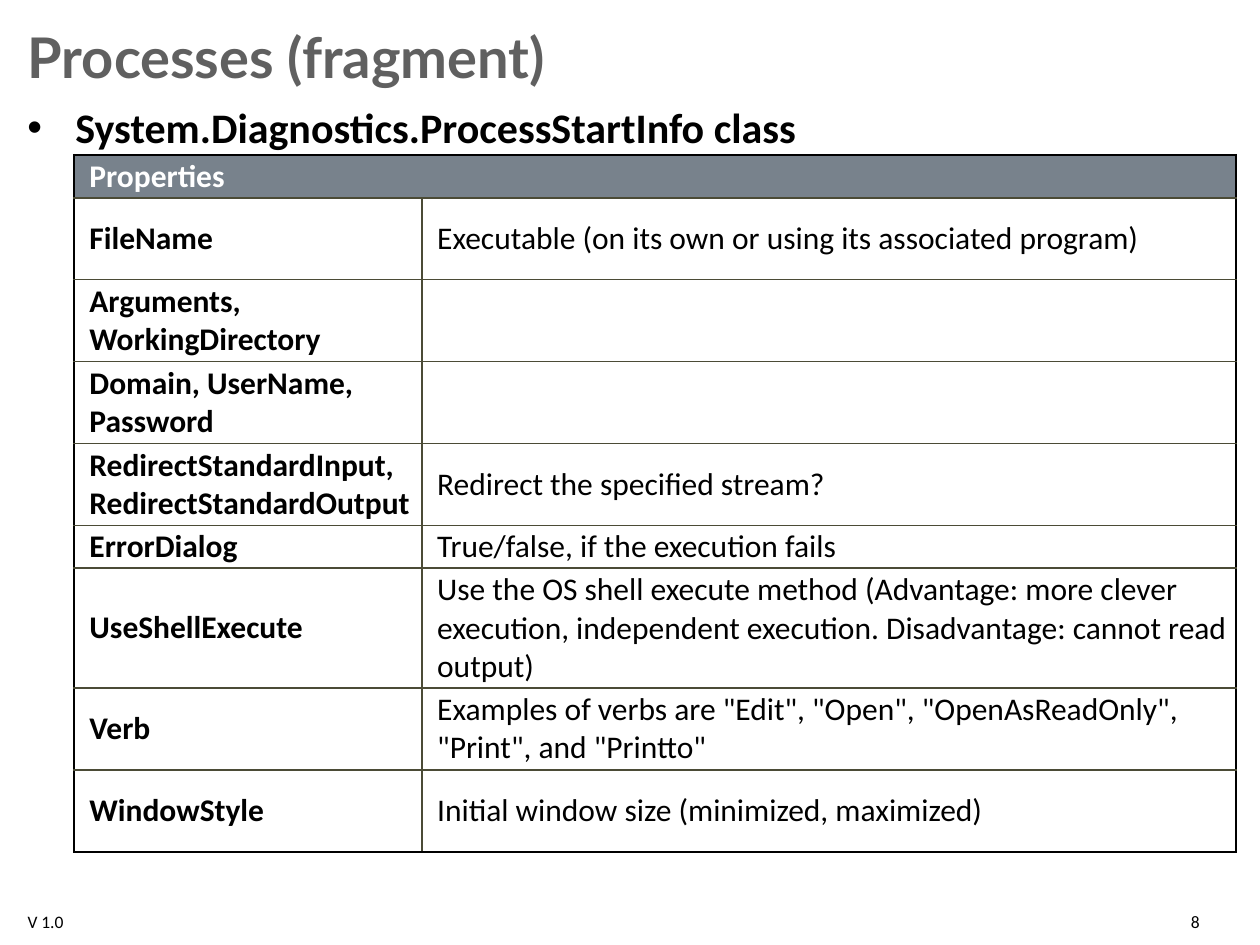
from lxml.etree import SubElement
from pptx import Presentation
from pptx.dml.color import RGBColor as Rgb
from pptx.enum.text import MSO_ANCHOR as Anchor, PP_ALIGN as Align
from pptx.oxml.ns import qn
from pptx.util import Inches, Pt

# Content
TITLE = "Processes (fragment)"
TOPIC = "System.Diagnostics.ProcessStartInfo class"
VERSION, PAGE = "V 1.0", "8"
HEADER = "Properties"
# property, description, height in text lines
PROPERTIES = [
    ("FileName", "Executable (on its own or using its associated program)", 2),
    ("Arguments, WorkingDirectory", "", 2),
    ("Domain, UserName, Password", "", 2),
    ("RedirectStandardInput, RedirectStandardOutput",
     "Redirect the specified stream?", 2),
    ("ErrorDialog", "True/false, if the execution fails", 1),
    ("UseShellExecute",
     "Use the OS shell execute method (Advantage: more clever execution, "
     "independent execution. Disadvantage: cannot read output)", 3),
    ("Verb", 'Examples of verbs are "Edit", "Open", "OpenAsReadOnly", '
             '"Print", and "Printto"', 2),
    ("WindowStyle", "Initial window size (minimized, maximized)", 2),
]

THEME = {
    "title_font": "Lato", "font": "Calibri",
    "title_size": 32, "topic_size": 24, "table_size": 18, "footer_size": 10,
    "title": "606060", "text": "000000", "header_text": "FFFFFF",
    "header_fill": "78828C", "frame": "000000", "grid": "4B4B36",
}
FRAME_WIDTH, GRID_WIDTH = 1.5, 1

# Layout in inches
WIDTH, HEIGHT = 10, 7.5
MARGIN = 0.12
CONTENT_WIDTH = WIDTH - 2 * MARGIN
FOOTER_TOP, FOOTER_HEIGHT = 7.18, 0.2
TABLE_LEFT, TABLE_TOP = 0.59, 1.23
COLUMNS = (2.76, 6.46)
ROW_HEIGHT = {1: 0.34, 2: 0.65, 3: 0.95}
BULLET_INDENT = 0.38


def add_run(paragraph, text, size, color, bold=False, font="font"):
    run = paragraph.add_run()
    run.text = text
    run.font.name = THEME[font]
    run.font.size = Pt(THEME[size])
    run.font.bold = bold
    run.font.color.rgb = Rgb.from_string(THEME[color])


def add_box(slide, left, top, width, height, anchor=Anchor.TOP):
    box = slide.shapes.add_textbox(*map(Inches, (left, top, width, height)))
    box.text_frame.word_wrap = True
    box.text_frame.vertical_anchor = anchor
    return box.text_frame.paragraphs[0]


def add_bullet(paragraph):
    props = paragraph._p.get_or_add_pPr()
    props.set("marL", str(Inches(BULLET_INDENT)))
    props.set("indent", str(-Inches(BULLET_INDENT)))
    SubElement(props, qn("a:buFont"), typeface="Arial")
    SubElement(props, qn("a:buChar"), char="•")


def style_cell(cell, outer_sides):
    """Draw the frame on outer sides, the thin grid on the others."""
    cell.vertical_anchor = Anchor.MIDDLE
    cell.margin_left, cell.margin_right = Inches(MARGIN), 0
    cell.margin_top = cell.margin_bottom = Inches(0.02)
    props = cell._tc.get_or_add_tcPr()
    for side in "LRTB":
        outer = side in outer_sides
        line = SubElement(props, qn(f"a:ln{side}"),
                          w=str(Pt(FRAME_WIDTH if outer else GRID_WIDTH)))
        fill = SubElement(line, qn("a:solidFill"))
        SubElement(fill, qn("a:srgbClr"), val=THEME["frame" if outer else "grid"])
    cell.fill.background()


def add_properties(slide):
    heights = [ROW_HEIGHT[1]] + [ROW_HEIGHT[lines] for *_, lines in PROPERTIES]
    table = slide.shapes.add_table(
        len(heights), len(COLUMNS), Inches(TABLE_LEFT), Inches(TABLE_TOP),
        Inches(sum(COLUMNS)), Inches(sum(heights))).table
    table.first_row = table.horz_banding = False
    for column, width in zip(table.columns, COLUMNS):
        column.width = Inches(width)
    for row, height in zip(table.rows, heights):
        row.height = Inches(height)

    # Header across both columns
    header = table.cell(0, 0)
    header.merge(table.cell(0, 1))
    style_cell(header, "LRT")
    style_cell(table.cell(0, 1), "RT")
    header.fill.solid()
    header.fill.fore_color.rgb = Rgb.from_string(THEME["header_fill"])
    add_run(header.text_frame.paragraphs[0], HEADER, "table_size",
            "header_text", bold=True)

    # One row per property
    for r, (*texts, _) in enumerate(PROPERTIES, start=1):
        bottom = "B" if r == len(PROPERTIES) else ""
        for c, text in enumerate(texts):
            cell = table.cell(r, c)
            style_cell(cell, "LR"[c] + bottom)
            if text:
                add_run(cell.text_frame.paragraphs[0], text, "table_size",
                        "text", bold=c == 0)


def main():
    deck = Presentation()
    deck.slide_width, deck.slide_height = Inches(WIDTH), Inches(HEIGHT)
    slide = deck.slides.add_slide(deck.slide_layouts[6])

    # Footer version
    version = add_box(slide, MARGIN, FOOTER_TOP, 0.79, FOOTER_HEIGHT)
    add_run(version, VERSION, "footer_size", "text")

    # Title and topic
    title = add_box(slide, MARGIN, 0.13, CONTENT_WIDTH, 0.63, Anchor.MIDDLE)
    add_run(title, TITLE, "title_size", "title", bold=True, font="title_font")
    topic = add_box(slide, MARGIN, 0.76, CONTENT_WIDTH, 6.3)
    add_bullet(topic)
    add_run(topic, TOPIC, "topic_size", "text", bold=True)

    add_properties(slide)

    # Page number
    page = add_box(slide, 8.31, FOOTER_TOP, 1.31, FOOTER_HEIGHT)
    page.alignment = Align.RIGHT
    add_run(page, PAGE, "footer_size", "text")

    deck.save("out.pptx")


if __name__ == "__main__":
    main()
